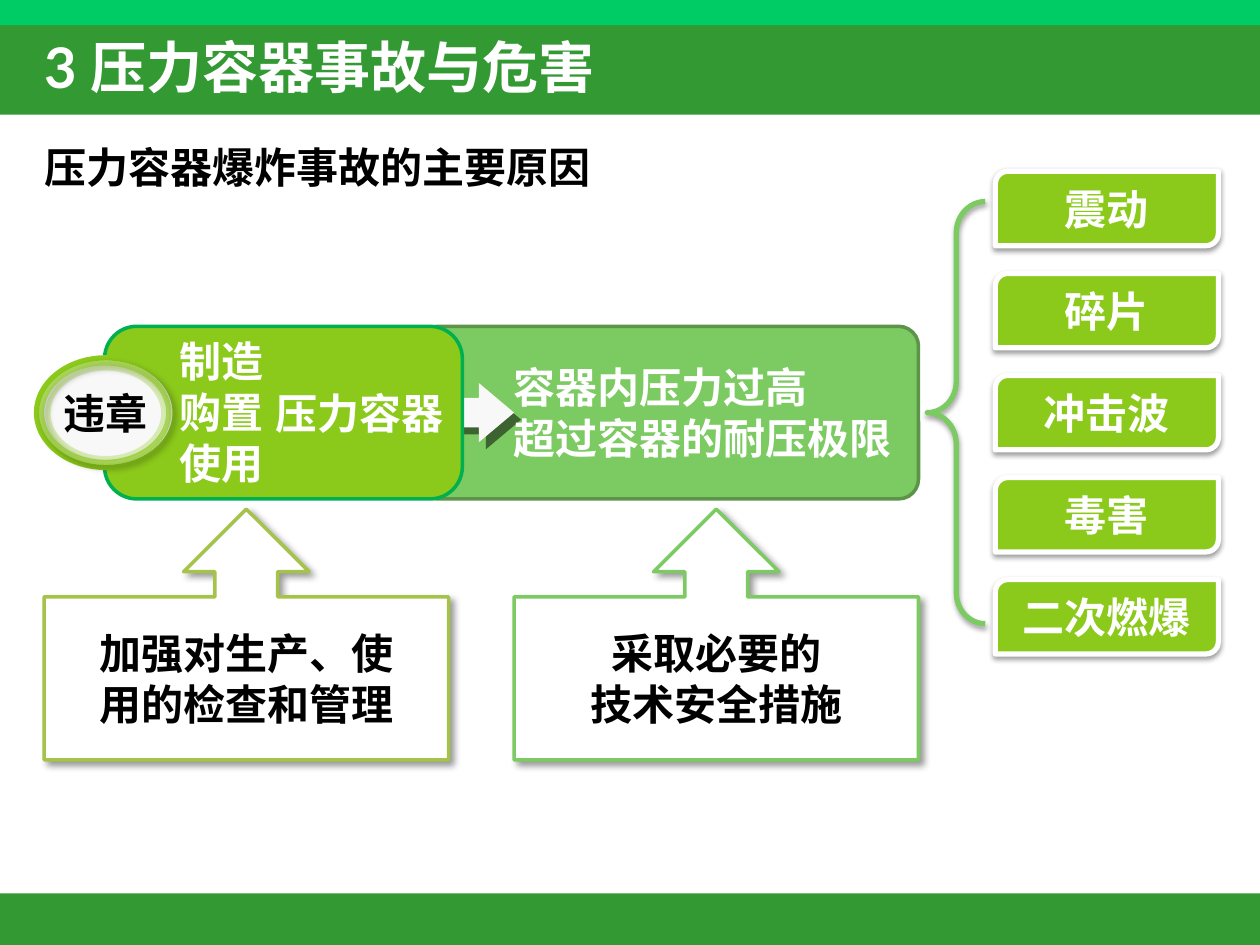
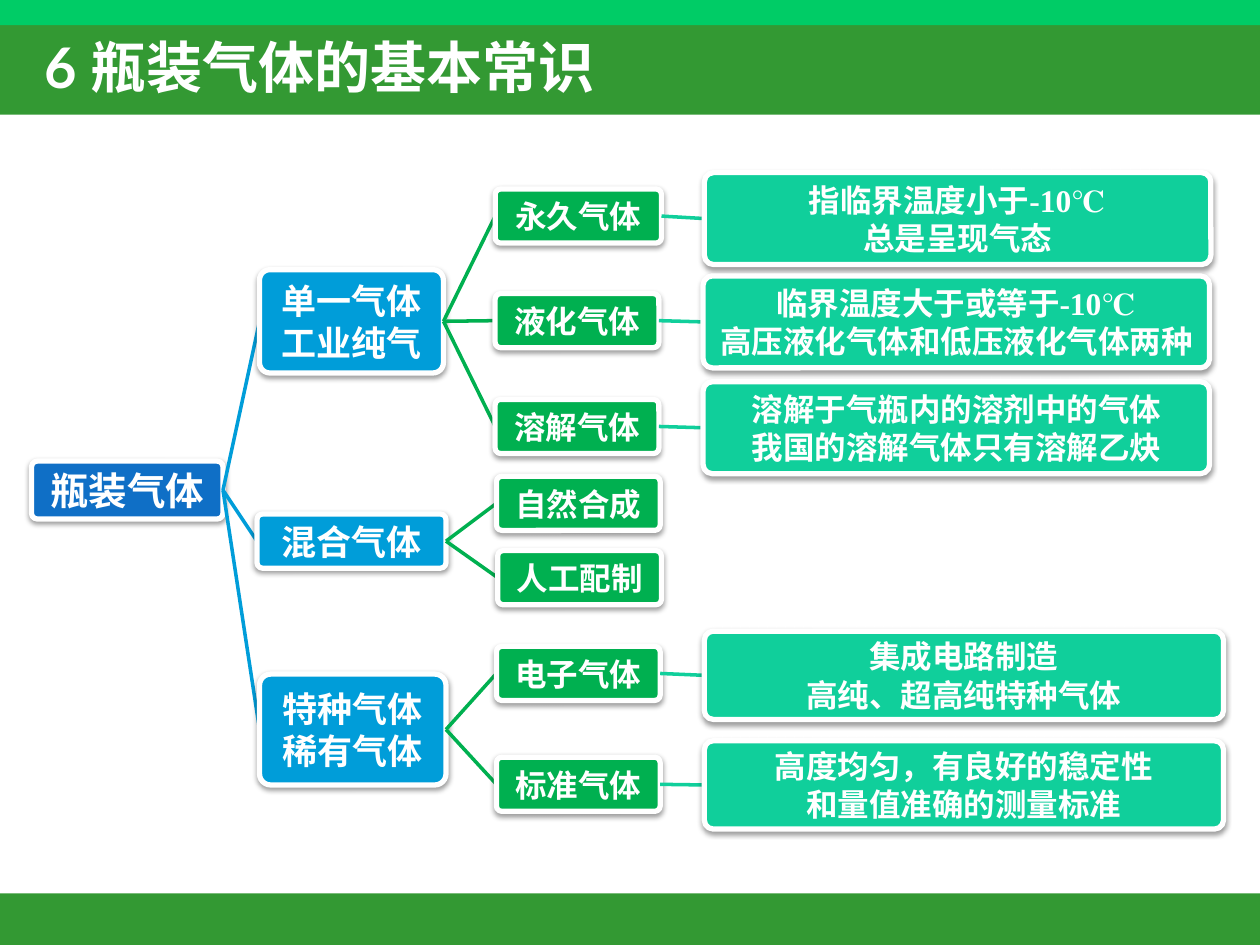
from lxml.etree import SubElement
from pptx import Presentation
from pptx.dml.color import RGBColor
from pptx.enum.shapes import MSO_CONNECTOR, MSO_SHAPE
from pptx.enum.text import MSO_ANCHOR, PP_ALIGN
from pptx.oxml.ns import qn
from pptx.util import Inches, Pt

WHITE = RGBColor(0xFF, 0xFF, 0xFF)
BLACK = RGBColor(0, 0, 0)
BAND = RGBColor(0x33, 0x99, 0x33)
BAND_TOP = RGBColor(0x00, 0xCC, 0x66)
LIME = RGBColor(0x8B, 0xC9, 0x1B)
OLIVE = RGBColor(0xA5, 0xC2, 0x49)
LEAF = RGBColor(0x7C, 0xCA, 0x62)
LEAF_DARK = RGBColor(0x5C, 0x95, 0x49)
GREEN = RGBColor(0x00, 0xB0, 0x50)
PALE = RGBColor(0xF8, 0xF8, 0xF8)
NAVY = RGBColor(0x0F, 0x6F, 0xC6)
SKY = RGBColor(0x00, 0x9D, 0xD9)
MINT = RGBColor(0x10, 0xCF, 0x9B)

CJK_FONT = "Noto Sans CJK SC"
SERIF = "Times New Roman"
# Shadows: opacity %, blur pt, distance pt, angle
SOFT = (38, 3.1, 1.6, 90)
CORNER = (40, 4, 3, 45)
HARD = (50, 0, 5.7, 45)


def write(tf, text, size=24, color=WHITE, font=SERIF, align=PP_ALIGN.LEFT,
          anchor=MSO_ANCHOR.MIDDLE, inset=(0.1, 0.05)):
    """Fill a text frame, one paragraph for each line of text."""
    tf.word_wrap = True
    tf.vertical_anchor = anchor
    tf.margin_left = tf.margin_right = Inches(inset[0])
    tf.margin_top = tf.margin_bottom = Inches(inset[1])
    for i, line in enumerate(text.split("\n")):
        p = tf.add_paragraph() if i else tf.paragraphs[0]
        p.alignment = align
        p.space_before = p.space_after = Pt(0)
        p.line_spacing = Pt(size * 1.21)
        r = p.add_run()
        r.text = line
        r.font.size = Pt(size)
        r.font.bold = True
        r.font.name = font
        r.font.color.rgb = color
        SubElement(r.font._element, qn("a:ea"), typeface=CJK_FONT)


def box(slide, kind, at, fill=None, line=None, width=2, adj=(), shadow=None):
    """Add a preset shape with the given fill, outline and shadow."""
    sp = slide.shapes.add_shape(kind, *map(Inches, at))
    for i, value in enumerate(adj):
        sp.adjustments[i] = value
    if fill is None:
        sp.fill.background()
    else:
        sp.fill.solid()
        sp.fill.fore_color.rgb = fill
    if line is None:
        sp.line.fill.background()
    else:
        sp.line.color.rgb = line
        sp.line.width = Pt(width)
    sp.shadow.inherit = False
    if shadow:
        opacity, blur, dist, angle = shadow
        effects = sp._element.spPr.find(qn("a:effectLst"))
        outer = SubElement(effects, qn("a:outerShdw"), blurRad=str(Pt(blur)),
                           dist=str(Pt(dist)), dir=str(angle * 60000),
                           algn="ctr", rotWithShape="0")
        clr = SubElement(outer, qn("a:srgbClr"), val=str(BLACK))
        SubElement(clr, qn("a:alpha"), val=str(opacity * 1000))
    return sp


prs = Presentation()
prs.slide_width, prs.slide_height = Inches(10), Inches(7.5)
master = prs.slide_master
causes = prs.slides.add_slide(prs.slide_layouts[1])
gases = prs.slides.add_slide(prs.slide_layouts[5])

# Bands live on the master, behind its placeholders
for i, (top, height, color) in enumerate([(7.09, 0.41, BAND), (0.2, 0.71, BAND),
                                          (0, 0.2, BAND_TOP)]):
    band = box(causes, MSO_SHAPE.RECTANGLE, (0, top, 10, height), color)
    master.shapes.element.insert(2 + i, band._element)

for slide, text in [(causes, "3 压力容器事故与危害"), (gases, "6 瓶装气体的基本常识")]:
    title = slide.shapes.title
    title.left, title.top = Inches(0.25), Inches(0.12)
    title.width, title.height = Inches(9.46), Inches(0.8)
    write(title.text_frame, text, size=32, font="Lato")

# Slide 1: causes of explosions
body = causes.placeholders[1]
body.left, body.top = Inches(0.25), Inches(1.07)
body.width, body.height = Inches(9.46), Inches(0.68)
pPr = body.text_frame.paragraphs[0]._p.get_or_add_pPr()
pPr.set("marL", "0")
pPr.set("indent", "0")
SubElement(pPr, qn("a:buNone"))
write(body.text_frame, "压力容器爆炸事故的主要原因", color=BLACK, anchor=MSO_ANCHOR.TOP)

box(causes, MSO_SHAPE.ROUNDED_RECTANGLE, (3.32, 2.59, 3.97, 1.37),
    LEAF, LEAF_DARK, adj=[0.115])
box(causes, MSO_SHAPE.RIGHT_ARROW, (3.34, 3.04, 0.74, 0.47), PALE,
    adj=[0.5, 0.594], shadow=HARD)
box(causes, MSO_SHAPE.ROUNDED_RECTANGLE, (0.83, 2.59, 2.84, 1.37),
    LIME, GREEN, adj=[0.187])

# Rings of the badge: place, fill, opacity %, shadow
for at, fill, opacity, shadow in [((0.29, 2.84, 1.1, 0.87), PALE, 100, None),
                                  ((0.33, 2.88, 1.01, 0.79), None, 70, CORNER),
                                  ((0.38, 2.92, 0.92, 0.72), None, 30, None)]:
    ring = box(causes, MSO_SHAPE.OVAL, at, fill, LIME, 3, shadow=shadow)
    if opacity < 100:
        clr = ring.line._ln.find(".//" + qn("a:srgbClr"))
        SubElement(clr, qn("a:alpha"), val=str(opacity * 1000))

for at, text, color, align in [
        ((3.98, 2.82, 3.28, 0.91), "容器内压力过高\n超过容器的耐压极限", WHITE, PP_ALIGN.LEFT),
        ((1.33, 2.61, 1, 1.31), "制造\n购置\n使用", WHITE, PP_ALIGN.LEFT),
        ((2.09, 3.02, 1.54, 0.5), "压力容器", WHITE, PP_ALIGN.LEFT),
        ((0.25, 3.02, 1.18, 0.5), "违章", BLACK, PP_ALIGN.CENTER)]:
    label = causes.shapes.add_textbox(*map(Inches, at))
    write(label.text_frame, text, color=color, align=align, anchor=MSO_ANCHOR.TOP)

for i, harm in enumerate(["震动", "碎片", "冲击波", "毒害", "二次燃爆"]):
    sp = box(causes, MSO_SHAPE.ROUND_2_DIAG_RECTANGLE, (7.9, 1.36 + 0.81 * i, 1.77, 0.59),
             LIME, WHITE, 3, shadow=SOFT)
    write(sp.text_frame, harm, font=CJK_FONT, align=PP_ALIGN.CENTER)
box(causes, MSO_SHAPE.LEFT_BRACE, (7.36, 1.6, 0.46, 3.35), line=LEAF, width=3,
    adj=[0.54, 0.5], shadow=SOFT)

for left, color, measure in [(4.08, LEAF, "采取必要的\n技术安全措施"),
                             (0.35, OLIVE, "加强对生产、使用的检查和管理")]:
    sp = box(causes, MSO_SHAPE.UP_ARROW_CALLOUT, (left, 4.04, 3.21, 1.99),
             WHITE, color, shadow=CORNER)
    write(sp.text_frame, measure, color=BLACK, align=PP_ALIGN.CENTER, inset=(0.28, 0.05))

# Slide 2: tree of bottled gases, each node after its parent
LEVELS = [(NAVY, 22), (SKY, 20), (GREEN, 18), (MINT, 18)]
NODES = [
    (0, (0.25, 3.66, 1.52, 0.46), "瓶装气体"),
    (1, (2.06, 2.14, 1.46, 0.82), "单一气体\n工业纯气"),
    (2, (3.93, 1.5, 1.32, 0.43), "永久气体"),
    (3, (5.59, 1.37, 4.02, 0.73), "指临界温度小于-10℃\n总是呈现气态"),
    (2, (3.93, 2.33, 1.3, 0.43), "液化气体"),
    (3, (5.58, 2.19, 4.02, 0.73), "临界温度大于或等于-10℃\n高压液化气体和低压液化气体两种"),
    (2, (3.93, 3.17, 1.3, 0.43), "溶解气体"),
    (3, (5.58, 3.03, 4.02, 0.73), "溶解于气瓶内的溶剂中的气体\n我国的溶解气体只有溶解乙炔"),
    (1, (2.04, 4.08, 1.5, 0.43), "混合气体"),
    (2, (3.94, 3.78, 1.3, 0.43), "自然合成"),
    (2, (3.95, 4.37, 1.3, 0.43), "人工配制"),
    (1, (2.06, 5.35, 1.48, 0.88), "特种气体\n稀有气体"),
    (2, (3.94, 5.13, 1.3, 0.43), "电子气体"),
    (3, (5.59, 5.01, 4.12, 0.7), "集成电路制造\n高纯、超高纯特种气体"),
    (2, (3.94, 6.01, 1.3, 0.43), "标准气体"),
    (3, (5.59, 5.88, 4.12, 0.7), "高度均匀，有良好的稳定性\n和量值准确的测量标准"),
]
latest = {}
for level, at, text in NODES:
    color, size = LEVELS[level]
    if level:
        link = gases.shapes.add_connector(MSO_CONNECTOR.STRAIGHT, 0, 0, 0, 0)
        link.line.color.rgb = color
        link.line.width = Pt(2)
        SubElement(link._element.spPr, qn("a:effectLst"))
    node = box(gases, MSO_SHAPE.ROUNDED_RECTANGLE, at, color, WHITE, 3,
               adj=[0.1], shadow=SOFT)
    write(node.text_frame, text, size=size, align=PP_ALIGN.CENTER, inset=(0.01, 0.01))
    if level:
        link.begin_connect(latest[level - 1], 3)
        link.end_connect(node, 1)
    latest[level] = node

prs.save("out.pptx")
